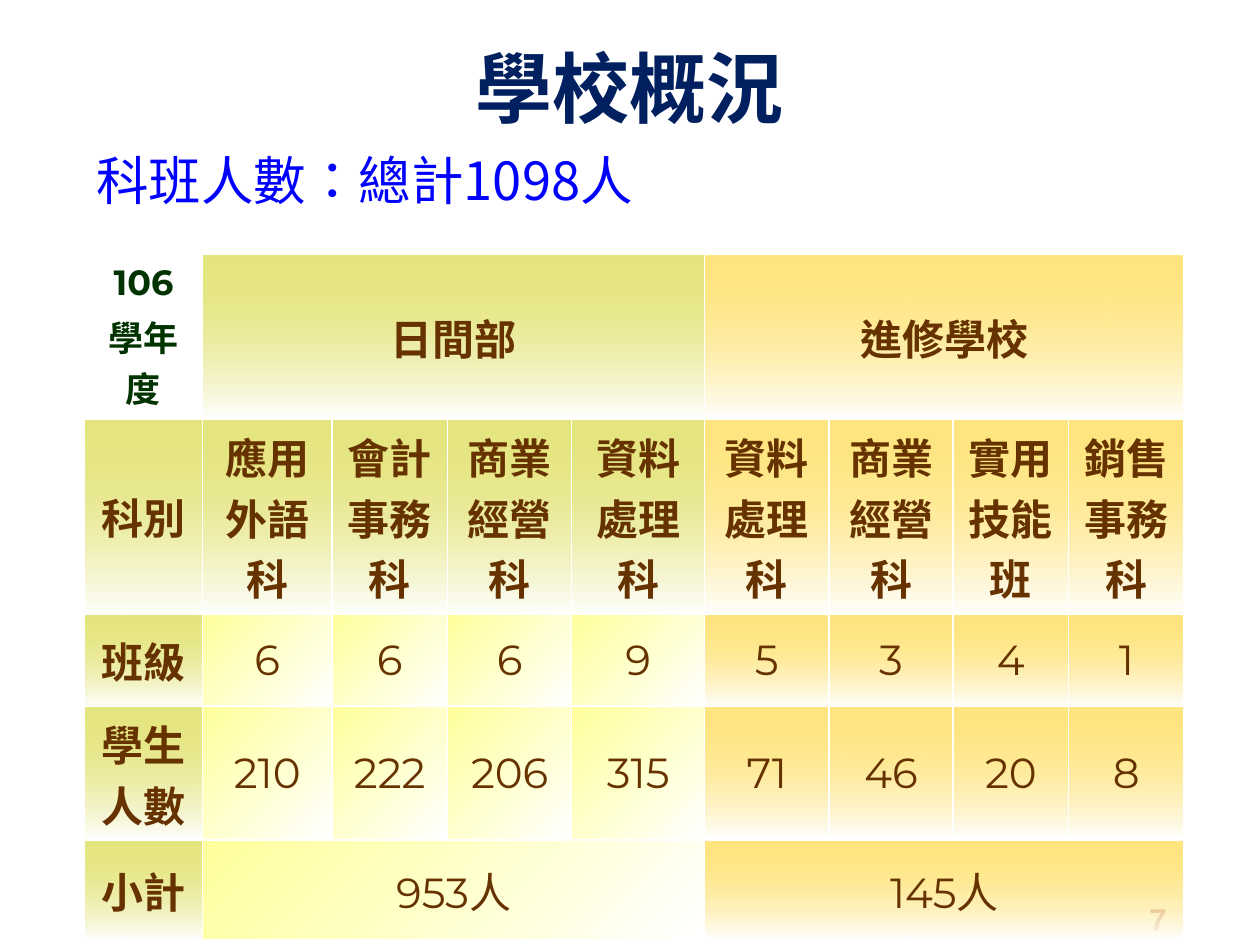
from dataclasses import dataclass

from pptx import Presentation
from pptx.dml.color import RGBColor
from pptx.enum.shapes import MSO_SHAPE
from pptx.enum.text import MSO_ANCHOR, PP_ALIGN
from pptx.oxml import parse_xml
from pptx.oxml.ns import nsdecls, qn
from pptx.util import Pt
from lxml import etree


@dataclass(frozen=True)
class Theme:
    han: str = "Noto Sans CJK SC"
    latin: str = "Montserrat"
    number_font: str = "Arial"
    white: str = "FFFFFF"
    navy: str = "002060"
    blue: str = "0000FF"
    brown: str = "663300"
    green: str = "003300"
    maroon: str = "800000"
    title_size: int = 44
    summary_size: int = 30
    cell_size: int = 24
    year_size: int = 20
    number_size: int = 18


THEME = Theme()

# Gradients: start colour, opacity in percent, angle in degrees
OLIVE = ("CCCC00", 50, 90)
GOLD = ("FFCC00", 50, 90)
LEMON = ("FFFF9B", 100, 45)

COLUMN_WIDTHS = [67.5, 74, 66, 71, 76, 71, 71, 66, 66]
ROW_HEIGHTS = [94, 111.5, 52.5, 76.5, 57]
DAY_START, EVENING_START = 1, 5
MERGED_ROWS = (0, 4)

ROWS = [
    ["106\n學年度", "日間部", "", "", "", "進修學校", "", "", ""],
    ["科別", "應用\v外語科", "會計\v事務科", "商業\v經營科", "資料處理科",
     "資料\v處理科", "商業\v經營科", "實用技能班", "銷售事務科"],
    ["班級", "6", "6", "6", "9", "5", "3", "4", "1"],
    ["學生\v人數", "210", "222", "206", "315", "71", "46", "20", "8"],
    ["小計", "953人", "", "", "", "145人", "", "", ""],
]


def add_run(paragraph, text, size, color, font, bold=False):
    run = paragraph.add_run()
    run.text = text
    run.font.size = Pt(size)
    run.font.bold = bold
    run.font.name = font
    run.font.color.rgb = RGBColor.from_string(color)
    # Traditional Chinese centres full-width punctuation
    run.font._element.set("lang", "zh-TW")
    east_asian = etree.SubElement(run.font._element, qn("a:ea"))
    east_asian.set("typeface", THEME.han)


def add_text(slide, box, text, size, color, font, bold=False,
             align=PP_ALIGN.LEFT, anchor=MSO_ANCHOR.TOP, spacing=None):
    frame = slide.shapes.add_textbox(*map(Pt, box)).text_frame
    frame.word_wrap = True
    frame.vertical_anchor = anchor
    paragraph = frame.paragraphs[0]
    paragraph.alignment = align
    paragraph.line_spacing = spacing
    add_run(paragraph, text, size, color, font, bold)


def add_veil(slide):
    veil = slide.shapes.add_shape(MSO_SHAPE.RECTANGLE, 0, 0, Pt(720), Pt(514))
    veil.shadow.inherit = False
    veil.line.fill.background()
    veil.fill.solid()
    veil.fill.fore_color.rgb = RGBColor.from_string(THEME.white)
    color = veil.fill._xPr.find(qn("a:solidFill"))[0]
    etree.SubElement(color, qn("a:alpha")).set("val", "38000")


def style_cell(cell, gradient):
    """Give the cell white borders and a gradient fading to white."""
    properties = cell._tc.get_or_add_tcPr()
    for side in ("lnL", "lnR", "lnT", "lnB"):
        properties.append(parse_xml(
            f'<a:{side} {nsdecls("a")} w="12700"><a:solidFill>'
            f'<a:srgbClr val="{THEME.white}"/></a:solidFill></a:{side}>'))
    if gradient is None:
        cell.fill.background()
        return
    color, opacity, angle = gradient
    properties.append(parse_xml(
        f'<a:gradFill {nsdecls("a")} rotWithShape="1"><a:gsLst>'
        f'<a:gs pos="0"><a:srgbClr val="{color}">'
        f'<a:alpha val="{opacity * 1000}"/></a:srgbClr></a:gs>'
        f'<a:gs pos="100000"><a:srgbClr val="{THEME.white}"/></a:gs>'
        f'</a:gsLst><a:lin ang="{angle * 60000}" scaled="1"/></a:gradFill>'))


def write_cell(cell, text, size, color, bold):
    cell.vertical_anchor = MSO_ANCHOR.MIDDLE
    frame = cell.text_frame
    for index, part in enumerate(text.split("\n")):
        paragraph = frame.add_paragraph() if index else frame.paragraphs[0]
        paragraph.alignment = PP_ALIGN.CENTER
        if index:
            paragraph.space_before = Pt(size * 0.2)
        for number, line in enumerate(part.split("\v")):
            if number:
                paragraph.add_line_break()
            add_run(paragraph, line, size, color, THEME.latin, bold)


def pick_gradient(row, column):
    if row == column == 0:
        return None
    if column >= EVENING_START:
        return GOLD
    return OLIVE if row < 2 or column == 0 else LEMON


def add_enrolment_table(slide):
    table = slide.shapes.add_table(
        len(ROWS), len(COLUMN_WIDTHS), Pt(48.25), Pt(145.5),
        Pt(sum(COLUMN_WIDTHS)), Pt(sum(ROW_HEIGHTS))).table
    table.first_row = table.horz_banding = False
    for column, width in zip(table.columns, COLUMN_WIDTHS):
        column.width = Pt(width)
    for row, height in zip(table.rows, ROW_HEIGHTS):
        row.height = Pt(height)

    # Each division spans four columns in the header and subtotal rows
    for row in MERGED_ROWS:
        for start in (DAY_START, EVENING_START):
            table.cell(row, start).merge(table.cell(row, start + 3))

    for r, values in enumerate(ROWS):
        for c, value in enumerate(values):
            cell = table.cell(r, c)
            style_cell(cell, pick_gradient(r, c))
            if not value:
                continue
            if r == c == 0:
                write_cell(cell, value, THEME.year_size, THEME.green, True)
            else:
                write_cell(cell, value, THEME.cell_size, THEME.brown,
                           r < 2 or c == 0)


def main():
    deck = Presentation()
    deck.slide_width, deck.slide_height = Pt(720), Pt(540)
    slide = deck.slides.add_slide(deck.slide_layouts[6])

    # Backdrop and page number
    add_veil(slide)
    add_text(slide, (649.5, 511, 51, 29), "7", THEME.number_size,
             THEME.maroon, THEME.number_font, bold=True)

    # Title, table and summary line
    add_text(slide, (0, 26, 720, 47), "學校概況", THEME.title_size,
             THEME.navy, THEME.han, bold=True,
             align=PP_ALIGN.CENTER, anchor=MSO_ANCHOR.MIDDLE)
    add_enrolment_table(slide)
    add_text(slide, (48, 88, 329, 37), "科班人數：總計1098人",
             THEME.summary_size, THEME.blue, THEME.han, spacing=0.8)

    deck.save("out.pptx")


if __name__ == "__main__":
    main()
